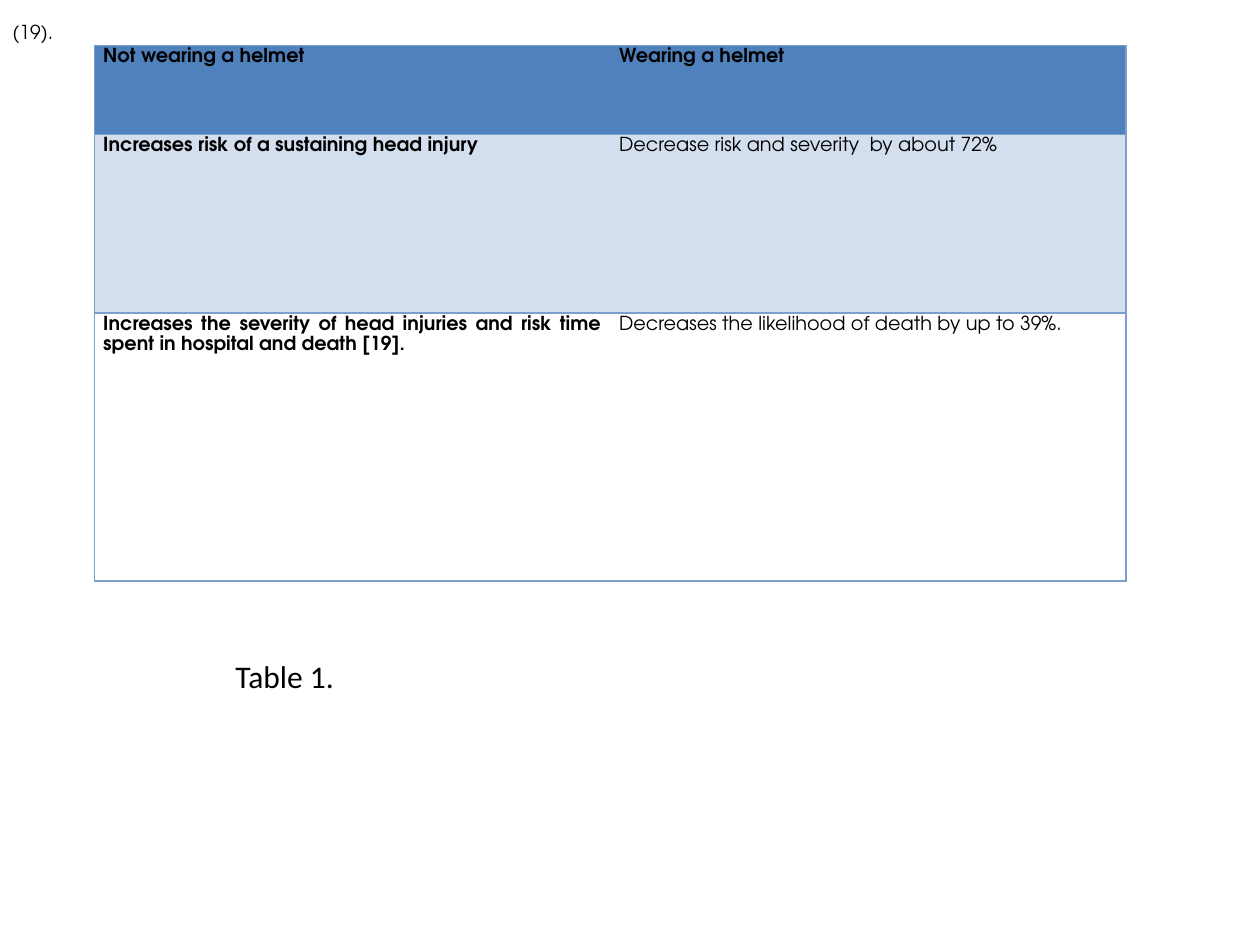
import dataclasses

import lxml.etree
import pptx
import pptx.dml.color
import pptx.enum.text
import pptx.oxml.ns
import pptx.util

Pt = pptx.util.Pt
RGBColor = pptx.dml.color.RGBColor
Align = pptx.enum.text.PP_ALIGN
Anchor = pptx.enum.text.MSO_ANCHOR


@dataclasses.dataclass(frozen=True)
class Theme:
    """Colours, fonts and type sizes of the slide."""

    ink: str = "000000"
    header: str = "4F81BD"
    band: str = "D3DFEE"
    rule: str = "7BA0CD"
    body_font: str = "TeX Gyre Adventor"
    caption_font: str = "Calibri"
    body_size: int = 11
    caption_size: int = 18


class SlideBuilder:
    """Draws text and tables on one slide in one theme."""

    def __init__(self, slide, theme):
        self.slide = slide
        self.theme = theme

    def style(self, paragraph, font_name, size, bold=False):
        font = paragraph.font
        font.name, font.size, font.bold = font_name, Pt(size), bold
        font.color.rgb = RGBColor.from_string(self.theme.ink)

    def text(self, text, box, font_name, size, anchor=Anchor.TOP, align=Align.LEFT):
        frame = self.slide.shapes.add_textbox(*map(Pt, box)).text_frame
        frame.word_wrap = True
        frame.vertical_anchor = anchor
        paragraph = frame.paragraphs[0]
        paragraph.text = text
        paragraph.alignment = align
        self.style(paragraph, font_name, size)

    def border(self, cell, side, visible):
        qn = pptx.oxml.ns.qn
        properties = cell._tc.get_or_add_tcPr()
        line = lxml.etree.SubElement(properties, qn(f"a:ln{side}"), w=str(Pt(1)))
        if visible:
            fill = lxml.etree.SubElement(line, qn("a:solidFill"))
            lxml.etree.SubElement(fill, qn("a:srgbClr"), val=self.theme.rule)
        else:
            lxml.etree.SubElement(line, qn("a:noFill"))

    def cell(self, cell, text, fill, bold, sides):
        for side in "LRTB":
            self.border(cell, side, side in sides)
        if fill:
            cell.fill.solid()
            cell.fill.fore_color.rgb = RGBColor.from_string(fill)
        else:
            cell.fill.background()
        cell.margin_left = cell.margin_right = Pt(5)
        cell.margin_top = cell.margin_bottom = 0
        paragraph = cell.text_frame.paragraphs[0]
        paragraph.text = text
        paragraph.alignment = Align.JUSTIFY
        paragraph.line_spacing = 1.15
        paragraph.space_after = Pt(20)
        self.style(paragraph, self.theme.body_font, self.theme.body_size, bold)

    def table(self, rows, fills, box, heights):
        frame = self.slide.shapes.add_table(len(rows), len(rows[0]), *map(Pt, box))
        table = frame.table
        table.first_row = table.horz_banding = False
        last = len(rows[0]) - 1
        for row_index, (texts, fill, height) in enumerate(zip(rows, fills, heights)):
            table.rows[row_index].height = Pt(height)
            for column_index, text in enumerate(texts):
                sides = "TB" + "L" * (column_index == 0) + "R" * (column_index == last)
                bold = row_index == 0 or column_index == 0
                self.cell(table.cell(row_index, column_index), text, fill, bold, sides)


def main():
    presentation = pptx.Presentation()
    presentation.slide_width, presentation.slide_height = Pt(720), Pt(540)
    theme = Theme()
    slide = presentation.slides.add_slide(presentation.slide_layouts[6])
    builder = SlideBuilder(slide, theme)
    rows = [
        ("Not wearing a helmet", "Wearing a helmet"),
        ("Increases risk of a sustaining head injury",
         "Decrease risk and severity  by about 72%"),
        ("Increases the severity of head injuries and risk time spent in hospital "
         "and death [19].",
         "Decreases the likelihood of death by up to 39%."),
    ]
    builder.table(rows, (theme.header, theme.band, None),
                  (54, 26, 589.6, 306), (51, 102, 153))
    builder.text("(19).", (0, 0, 720, 36), theme.body_font, theme.body_size,
                 Anchor.MIDDLE, Align.JUSTIFY)
    builder.text("Table 1.", (127.5, 372, 380, 29), theme.caption_font,
                 theme.caption_size)
    presentation.save("out.pptx")


if __name__ == "__main__":
    main()
